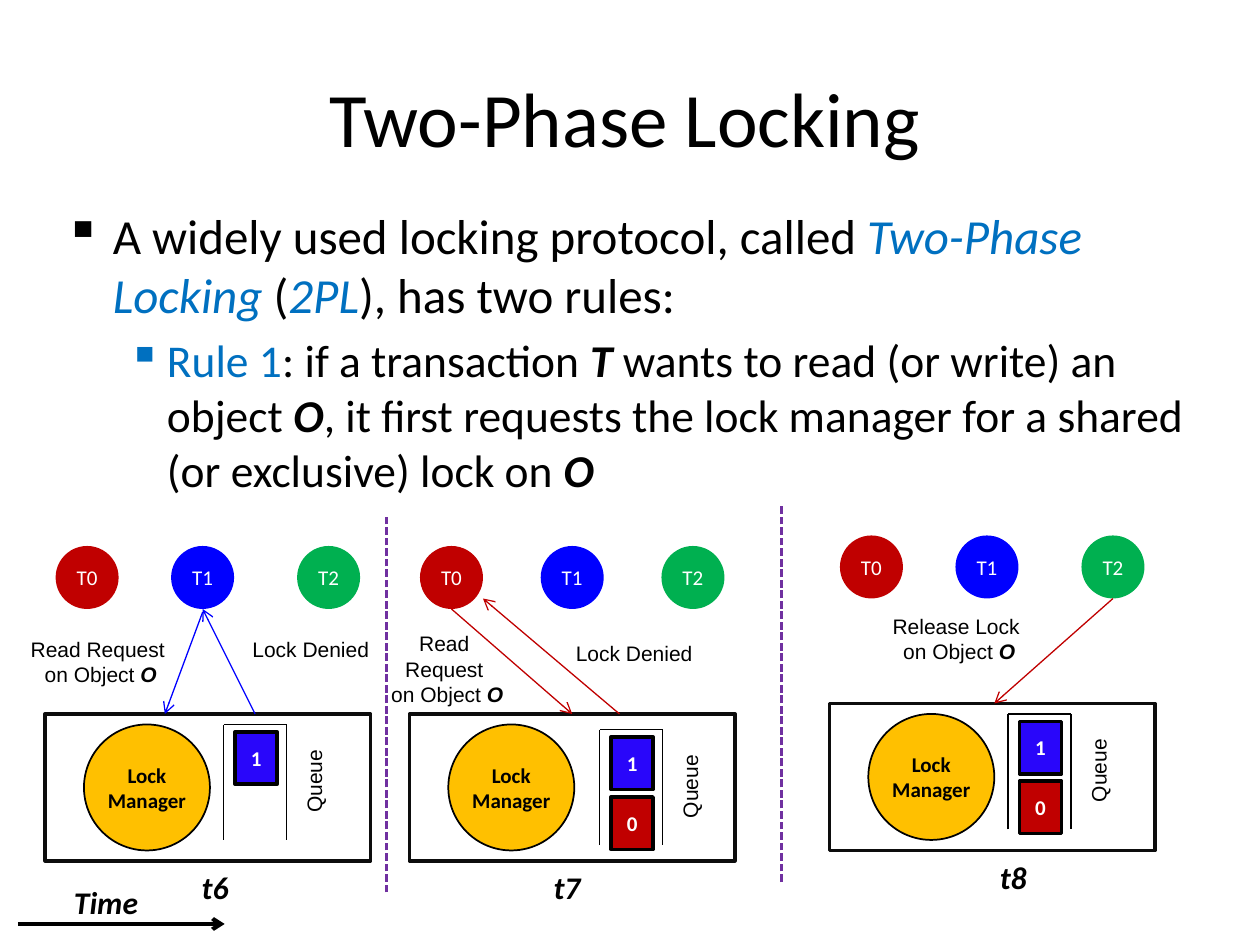
from dataclasses import dataclass
from itertools import pairwise

from lxml import etree
from pptx import Presentation
from pptx.dml.color import RGBColor
from pptx.enum.dml import MSO_LINE
from pptx.enum.shapes import MSO_CONNECTOR, MSO_SHAPE
from pptx.enum.text import MSO_ANCHOR, PP_ALIGN
from pptx.oxml.ns import qn
from pptx.util import Inches, Pt

OVAL, RECT = MSO_SHAPE.OVAL, MSO_SHAPE.RECTANGLE
LINE, DASH = MSO_CONNECTOR.STRAIGHT, MSO_LINE.SQUARE_DOT
MIDDLE, TOP = MSO_ANCHOR.MIDDLE, MSO_ANCHOR.TOP
CENTER, LEFT = PP_ALIGN.CENTER, PP_ALIGN.LEFT
COLS, ROWS = 120, 90


@dataclass(frozen=True)
class Theme:
    head: str = "Calibri"
    note: str = "Arial"
    black: str = "000000"
    frame: str = "0D0D0D"
    white: str = "FFFFFF"
    accent: str = "0070C0"
    red: str = "C00000"
    blue: str = "0000FF"
    green: str = "00B050"
    gold: str = "FFC000"
    slot: str = "2906FA"
    divide: str = "7030A0"
    title: int = 44
    body: int = 28
    rule: int = 26
    step: int = 18
    small: int = 12


T = Theme()
OBJECT = ("O", "bi")


def unit(n):
    """Length of n grid cells, twelve to the inch."""
    return Inches(n / 12)


def rgb(code):
    return RGBColor.from_string(code)


def write(para, runs, size, font=T.head, color=T.black, style="", align=CENTER):
    """Fill a paragraph with (text, style) runs; b, i and a mean bold, italic, accent."""
    para.alignment = align
    base = para.font
    base.name, base.size, base.color.rgb = font, Pt(size), rgb(color)
    base.bold, base.italic = "b" in style, "i" in style
    for text, marks in runs:
        for n, part in enumerate(text.split("\n")):
            if n:
                para.add_line_break()
            run = para.add_run()
            run.text = part
            if "b" in marks:
                run.font.bold = True
            if "i" in marks:
                run.font.italic = True
            if "a" in marks:
                run.font.color.rgb = rgb(T.accent)


def add_text(slide, box, runs, size, wrap=False, anchor=TOP, **look):
    shape = slide.shapes.add_textbox(*map(unit, box))
    frame = shape.text_frame
    frame.word_wrap, frame.vertical_anchor = wrap, anchor
    write(frame.paragraphs[0], runs, size, **look)
    return shape


def add_box(slide, kind, box, fill=None, line=None, width=1, text="", **look):
    shape = slide.shapes.add_shape(kind, *map(unit, box))
    shape.shadow.inherit = False
    if fill:
        shape.fill.solid()
        shape.fill.fore_color.rgb = rgb(fill)
    else:
        shape.fill.background()
    if line:
        shape.line.color.rgb, shape.line.width = rgb(line), Pt(width)
    else:
        shape.line.fill.background()
    if text:
        frame = shape.text_frame
        frame.margin_left = frame.margin_right = 0
        frame.vertical_anchor = MIDDLE
        write(frame.paragraphs[0], [(text, "")], T.small, **look)


def add_line(slide, start, end, color=T.black, width=0.75, arrow=False, dash=None):
    line = slide.shapes.add_connector(LINE, *map(unit, (*start, *end)))
    line.line.color.rgb, line.line.width = rgb(color), Pt(width)
    if dash:
        line.line.dash_style = dash
    props = line._element.spPr
    if arrow:
        etree.SubElement(props.find(qn("a:ln")), qn("a:tailEnd"), type="arrow")
    etree.SubElement(props, qn("a:effectLst"))


def add_bullet(para, runs, size, left, hang):
    write(para, runs, size, align=LEFT)
    para.space_before = Pt(size * 0.2)
    props = para._p.get_or_add_pPr()
    props.set("marL", str(Inches(left)))
    props.set("indent", str(-Inches(hang)))
    mark = etree.Element(qn("a:buChar"), char="▪")
    props.find(qn("a:spcBef")).addnext(mark)


def add_body(slide, box):
    frame = slide.shapes.add_textbox(*map(unit, box)).text_frame
    frame.word_wrap = True
    add_bullet(frame.paragraphs[0], [
        ("A widely used locking protocol, called ", ""), ("Two-Phase Locking", "ai"),
        (" (", ""), ("2PL", "ai"), ("), has two rules:", "")], T.body, 0.38, 0.38)
    add_bullet(frame.add_paragraph(), [
        ("Rule 1", "a"), (": if a transaction ", ""), ("T", "bi"),
        (" wants to read (or write) an object ", ""), OBJECT,
        (", it first requests the lock manager for a shared (or exclusive) lock on ", ""),
        OBJECT], T.rule, 0.81, 0.31)


def add_queue(slide, x, y, items):
    """Open-ended queue with its waiting transactions, top item first."""
    for start, end in pairwise([(x, y + 11), (x, y), (x + 6, y), (x + 6, y + 11)]):
        add_line(slide, start, end)
    label = add_text(slide, (x + 4.4, y + 3.6, 8.4, 3.6), [("Queue", "")],
                     T.small, font=T.note)
    label.rotation = 270
    for n, (text, fill) in enumerate(items):
        add_box(slide, RECT, (x + 1.1, y + 0.7 + 5.7 * n, 4, 5), fill, T.black, 2,
                text, color=T.white, style="b")


def add_panel(slide, x, y, step, nodes, queue, items, notes, arrows, color):
    """One moment in time; all parts are offset from the manager frame at x, y."""
    fills = (T.red, T.blue, T.green)
    for n, (col, fill) in enumerate(zip(nodes, fills)):
        add_box(slide, OVAL, (x + col, y - 16, 6, 6), fill, text=f"T{n}", color=T.white)
    add_box(slide, RECT, (x, y, 31, 14), line=T.frame, width=2)
    add_box(slide, OVAL, (x + 3.7, y + 1, 12, 12), T.gold, T.black,
            text="Lock Manager", style="b")
    add_queue(slide, x + queue[0], y + queue[1], items)
    for (col, row, wide, high), runs in notes:
        add_text(slide, (x + col, y + row, wide, high), runs, T.small, font=T.note)
    for (a, b), (c, d) in arrows:
        add_line(slide, (x + a, y + b), (x + c, y + d), color, arrow=True)
    name, col = step
    add_text(slide, (x + col, y + 14.1, 5, 4.8), [(name, "")], T.step, style="bi")


def add_time(slide, x, y):
    add_line(slide, (x, y), (x + 19.7, y), width=2.25, arrow=True)
    add_text(slide, (x + 4.1, y - 4.5, 8.6, 4.8), [("Time", "")], T.step, style="bi")


def main():
    deck = Presentation()
    deck.slide_width, deck.slide_height = unit(COLS), unit(ROWS)
    slide = deck.slides.add_slide(deck.slide_layouts[6])
    add_text(slide, (1, 3.6, 117, 15), [("Two-Phase Locking", "")], T.title,
             wrap=True, anchor=MIDDLE)
    add_body(slide, (5, 19, 113.4, 69))

    one, zero = ("1", T.slot), ("0", T.red)
    denied = [("Lock Denied", "")]
    add_panel(slide, 4.3, 68, ("t6", 13.7), (1, 12, 24), (17, 1), [one],
              [((-2.6, -8, 15.8, 6), [("Read Request \non Object ", ""), OBJECT]),
               ((18.5, -8, 13.6, 3.6), denied)],
              [((15, -9.7), (11.4, 0)), ((20, 0), (15, -10))], T.blue)
    add_panel(slide, 39, 68, ("t7", 12.5), (1, 12.5, 24), (18.1, 1.5), [one, zero],
              [((-3, -8.5, 13.2, 8.5), [("Read \nRequest \non Object ", ""), OBJECT]),
               ((14.6, -7.6, 13.6, 3.6), denied)],
              [((4, -10), (15.5, 0)), ((20, 0), (7, -11))], T.red)
    add_panel(slide, 79, 67, ("t8", 15), (1, 12, 24), (17, 1), [one, zero],
              [((4.8, -9.2, 15.1, 6), [("Release Lock \non Object ", ""), OBJECT])],
              [((27, -10), (15.7, 0))], T.red)
    for x, y in ((36.8, 49), (74.4, 48)):
        add_line(slide, (x, y + 36), (x, y), T.divide, 1.5, dash=DASH)
    add_time(slide, 1.7, 88)
    deck.save("out.pptx")


if __name__ == "__main__":
    main()
